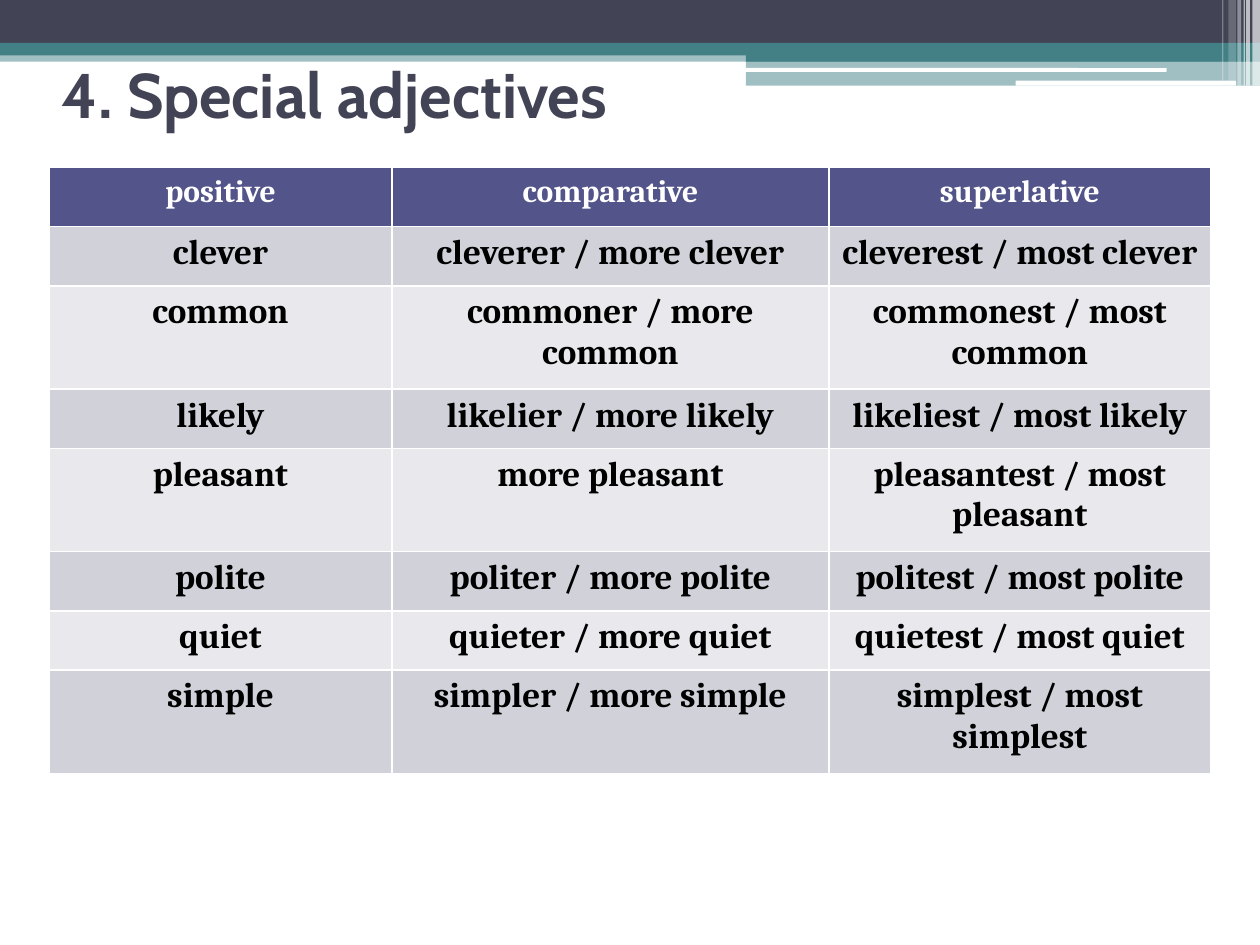
from pptx import Presentation
from pptx.dml.color import RGBColor
from pptx.enum.shapes import MSO_SHAPE as Shape
from pptx.enum.text import MSO_ANCHOR as Anchor, PP_ALIGN as Align
from pptx.oxml.ns import qn
from pptx.util import Inches, Pt
from lxml import etree

WHITE = RGBColor(0xFF, 0xFF, 0xFF)
BLACK = RGBColor(0x00, 0x00, 0x00)
SLATE = RGBColor(0x42, 0x44, 0x56)
TEAL = RGBColor(0x43, 0x80, 0x86)
HEADER = RGBColor(0x53, 0x54, 0x8A)
BAND_DARK = RGBColor(0xD1, 0xD1, 0xDA)
BAND_LIGHT = RGBColor(0xE9, 0xE9, 0xED)

COLUMNS, ROWS = 100, 75  # grid over the whole slide


class Deck:
    heading_font, body_font = "Cabin", "Cambria"

    def __init__(self, width, height):
        self.prs = Presentation()
        self.prs.slide_width, self.prs.slide_height = width, height
        self.slide = self.prs.slides.add_slide(self.prs.slide_layouts[5])

    def x(self, columns):
        return round(self.prs.slide_width * columns / COLUMNS)

    def y(self, rows):
        return round(self.prs.slide_height * rows / ROWS)

    def box(self, left, top, width, height):
        return self.x(left), self.y(top), self.x(width), self.y(height)

    def style(self, p, font, size, color, align):
        p.alignment = align
        for r in p.runs:
            r.font.name, r.font.size, r.font.bold = font, Pt(size), True
            r.font.color.rgb = color

    def bar(self, box, color, opacity=100, kind=Shape.RECTANGLE):
        s = self.slide.shapes.add_shape(kind, *self.box(*box))
        s.shadow.inherit = False
        s.fill.solid()
        s.fill.fore_color.rgb = color
        s.line.fill.background()
        if opacity < 100:
            rgb = s.fill._xPr.find(".//" + qn("a:srgbClr"))
            etree.SubElement(rgb, qn("a:alpha"), val=str(opacity * 1000))

    def title(self, box, text):
        sp = self.slide.shapes.title
        sp.left, sp.top, sp.width, sp.height = self.box(*box)
        tf = sp.text_frame
        tf.text = text
        tf.vertical_anchor = Anchor.MIDDLE
        self.style(tf.paragraphs[0], self.heading_font, 36, SLATE, Align.LEFT)

    def table(self, left, top, widths, heights, data):
        box = self.box(left, top, sum(widths), sum(heights))
        table = self.slide.shapes.add_table(len(data), len(widths), *box).table
        for column, width in zip(table.columns, widths):
            column.width = self.x(width)
        for i, (row, height, texts) in enumerate(zip(table.rows, heights, data)):
            row.height = self.y(height)
            if i == 0:
                fill, size, color = HEADER, 18, WHITE
            else:
                fill, size, color = (BAND_DARK if i % 2 else BAND_LIGHT), 20, BLACK
            for cell, text in zip(row.cells, texts):
                cell.fill.solid()
                cell.fill.fore_color.rgb = fill
                cell.text_frame.text = text
                self.style(cell.text_frame.paragraphs[0], self.body_font,
                           size, color, Align.CENTER)


def main():
    deck = Deck(Inches(10), Inches(7.5))

    # Bands across the top
    deck.bar((0, 4, 100, 0.9), TEAL, 50)
    deck.bar((0, 0, 100, 3.4), SLATE)
    deck.bar((0, 3.4, 100, 1), TEAL)

    # Stepped bands on the right, with white slits
    deck.bar((59.2, 3.9, 40.8, 1), TEAL)
    deck.bar((59.2, 4.8, 40.8, 2), TEAL, 50)
    for slit in ((59.1, 5.4, 33.5, 0.3), (80.6, 6.4, 17.5, 0.4)):
        deck.bar(slit, WHITE, kind=Shape.ROUNDED_RECTANGLE)

    # Translucent stripes in the corner: left, width, height, opacity
    for left, width, height, opacity in (
            (99.4, 0.6, 6.8, 65), (98.9, 0.3, 6.8, 65), (98.7, 0.1, 6.8, 60),
            (98.2, 0.3, 6.8, 40), (97.5, 0.6, 6.4, 20), (97, 0.1, 6.4, 30)):
        deck.bar((left, 0, width, height), WHITE, opacity)

    deck.title((3.9, 3.9, 90, 7), "4. Special adjectives")

    # Comparison table
    single, double = 4.7, 8.2
    deck.table(3.9, 13.3, (27.2, 34.7, 30.3),
               (single, single, double, single, double, single, single, double), (
        ("positive", "comparative", "superlative"),
        ("clever", "cleverer / more clever", "cleverest / most clever"),
        ("common", "commoner / more common", "commonest / most common"),
        ("likely", "likelier / more likely", "likeliest / most likely"),
        ("pleasant", "more pleasant", "pleasantest / most pleasant"),
        ("polite", "politer / more polite", "politest / most polite"),
        ("quiet", "quieter / more quiet", "quietest / most quiet"),
        ("simple", "simpler / more simple", "simplest / most simplest"),
    ))

    deck.prs.save("out.pptx")


if __name__ == "__main__":
    main()
